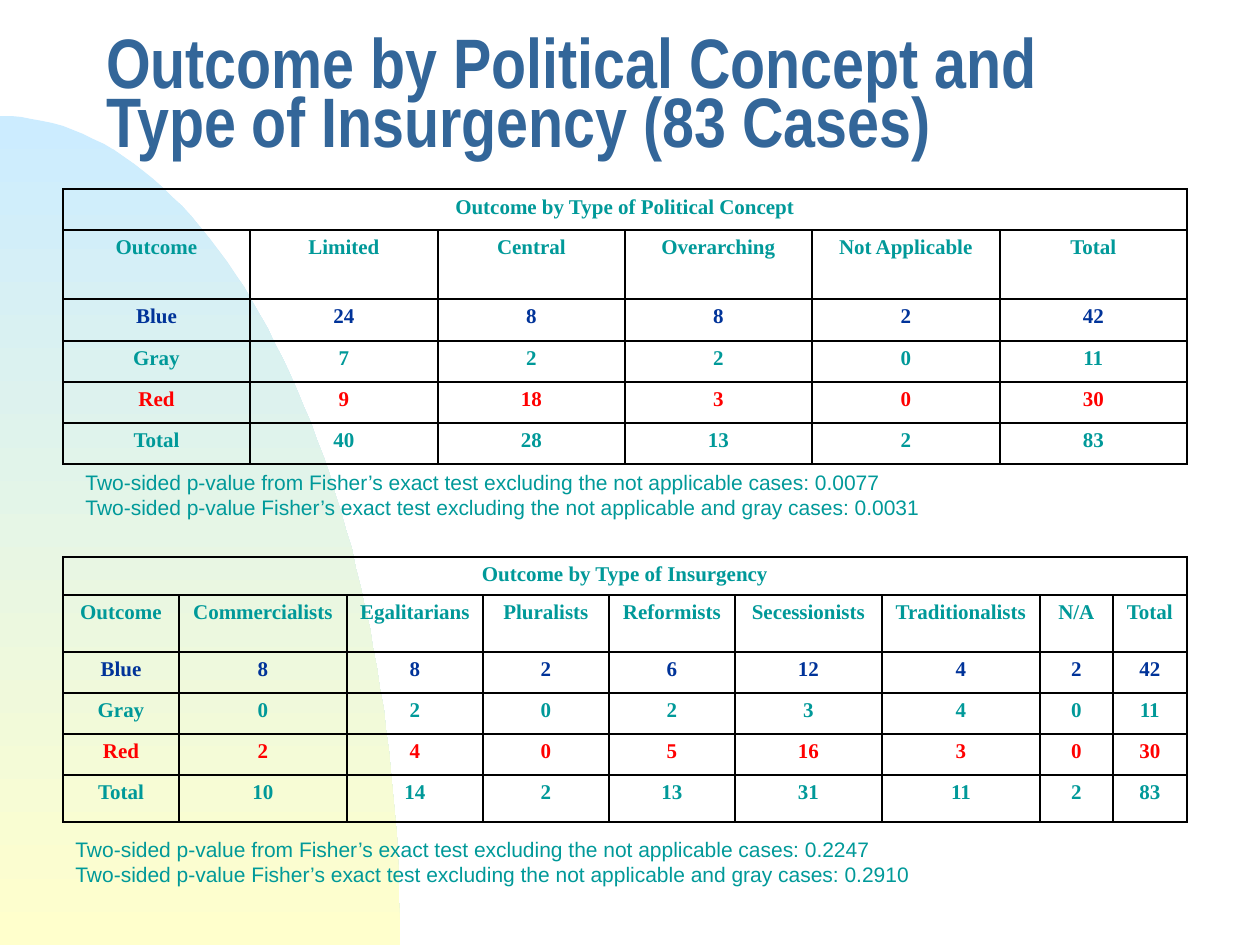
"""Build a slide with two outcome tables and their test results."""
from math import cos, pi, sin

from lxml import etree
from pptx import Presentation
from pptx.dml.color import RGBColor
from pptx.enum.text import MSO_ANCHOR, PP_ALIGN
from pptx.oxml.ns import qn
from pptx.util import Pt

SCALE = 914400 / 126
LEFT, CENTER = PP_ALIGN.LEFT, PP_ALIGN.CENTER
TOP, MIDDLE = MSO_ANCHOR.TOP, MSO_ANCHOR.MIDDLE
BLUE, TEAL, RED = "003399", "009999", "FF0000"
ROW_COLORS = {"Blue": BLUE, "Red": RED}


def px(length):
    return round(length * SCALE)


def color(value):
    return RGBColor.from_string(value)


def write(frame, text, font="Arial", size=12, fill=TEAL, bold=False,
          align=LEFT, spacing=1.0):
    frame.text = text
    for paragraph in frame.paragraphs:
        paragraph.alignment = align
        paragraph.line_spacing = spacing
        for run in paragraph.runs:
            run.font.name = font
            run.font.size = Pt(size)
            run.font.bold = bold
            run.font.color.rgb = color(fill)


class OutcomeSlide:
    """Hold the slide and draw its elements in one style."""

    def __init__(self, presentation):
        self.slide = presentation.slides.add_slide(presentation.slide_layouts[6])
        self.table_font = "Times New Roman"
        self.border = "000000"

    def arc(self, width, top, bottom, start, end, steps=60):
        height = bottom - top
        angles = [pi / 2 * step / steps for step in range(steps + 1)]
        points = [(width * sin(angle), bottom - height * cos(angle))
                  for angle in angles]
        builder = self.slide.shapes.build_freeform(0, top, scale=SCALE)
        builder.add_line_segments(points[1:] + [(0, bottom)], close=True)
        shape = builder.convert_to_shape()
        shape.shadow.inherit = False
        shape.line.fill.background()
        shape.fill.gradient()
        shape.fill.gradient_angle = 270
        for stop, value, position in zip(shape.fill.gradient_stops, (start, end), (0, 1)):
            stop.color.rgb = color(value)
            stop.position = position

    def text(self, box, text, anchor=TOP, **style):
        shape = self.slide.shapes.add_textbox(*map(px, box))
        frame = shape.text_frame
        frame.word_wrap = True
        frame.vertical_anchor = anchor
        write(frame, text, **style)

    def outline(self, cell):
        properties = cell._tc.get_or_add_tcPr()
        for side in ("a:lnL", "a:lnR", "a:lnT", "a:lnB"):
            line = etree.SubElement(properties, qn(side), w=str(Pt(1)))
            fill = etree.SubElement(line, qn("a:solidFill"))
            etree.SubElement(fill, qn("a:srgbClr"), val=self.border)

    def table(self, left, top, widths, heights, title, rows):
        shape = self.slide.shapes.add_table(
            len(heights), len(widths), px(left), px(top),
            px(sum(widths)), px(sum(heights)))
        table = shape.table
        table.first_row = table.horz_banding = False
        for column, width in zip(table.columns, widths):
            column.width = px(width)
        for row, height in zip(table.rows, heights):
            row.height = px(height)
        for cell in table.iter_cells():
            self.outline(cell)
            cell.fill.background()
        table.cell(0, 0).merge(table.cell(0, len(widths) - 1))
        for row, values in enumerate([[title]] + rows):
            fill = ROW_COLORS.get(values[0], TEAL)
            for column, value in enumerate(values):
                write(table.cell(row, column).text_frame, str(value),
                      font=self.table_font, fill=fill, bold=True, align=CENTER)

    def test_results(self, box, without_na, without_gray):
        self.text(box, (
            "Two-sided p-value from Fisher’s exact test excluding "
            f"the not applicable cases: {without_na}\n"
            "Two-sided p-value Fisher’s exact test excluding "
            f"the not applicable and gray cases: {without_gray}"))


def main():
    presentation = Presentation()
    presentation.slide_width = px(1260)
    presentation.slide_height = px(945)
    page = OutcomeSlide(presentation)

    page.arc(400, 116, 945, "CCECFF", "FFFFCC")
    page.text((94, 21, 1061, 158),
              "Outcome by Political Concept and Type of Insurgency (83 Cases)",
              anchor=MIDDLE, font="Arial Narrow", size=40, fill="336699",
              bold=True, spacing=0.7)

    page.table(63, 189, [187, 188, 187] * 2, [41, 69, 42, 41, 41, 41],
               "Outcome by Type of Political Concept", [
        ["Outcome", "Limited", "Central", "Overarching", "Not Applicable", "Total"],
        ["Blue", 24, 8, 8, 2, 42],
        ["Gray", 7, 2, 2, 0, 11],
        ["Red", 9, 18, 3, 0, 30],
        ["Total", 40, 28, 13, 2, 83],
    ])
    page.test_results((73, 463, 1113, 63), "0.0077", "0.0031")

    page.table(63, 557, [116, 168, 136, 126, 126, 147, 158, 73, 74],
               [38, 57, 41, 41, 41, 47], "Outcome by Type of Insurgency", [
        ["Outcome", "Commercialists", "Egalitarians", "Pluralists", "Reformists",
         "Secessionists", "Traditionalists", "N/A", "Total"],
        ["Blue", 8, 8, 2, 6, 12, 4, 2, 42],
        ["Gray", 0, 2, 0, 2, 3, 4, 0, 11],
        ["Red", 2, 4, 0, 5, 16, 3, 0, 30],
        ["Total", 10, 14, 2, 13, 31, 11, 2, 83],
    ])
    page.test_results((63, 830, 1124, 63), "0.2247", "0.2910")

    presentation.save("out.pptx")


if __name__ == "__main__":
    main()
